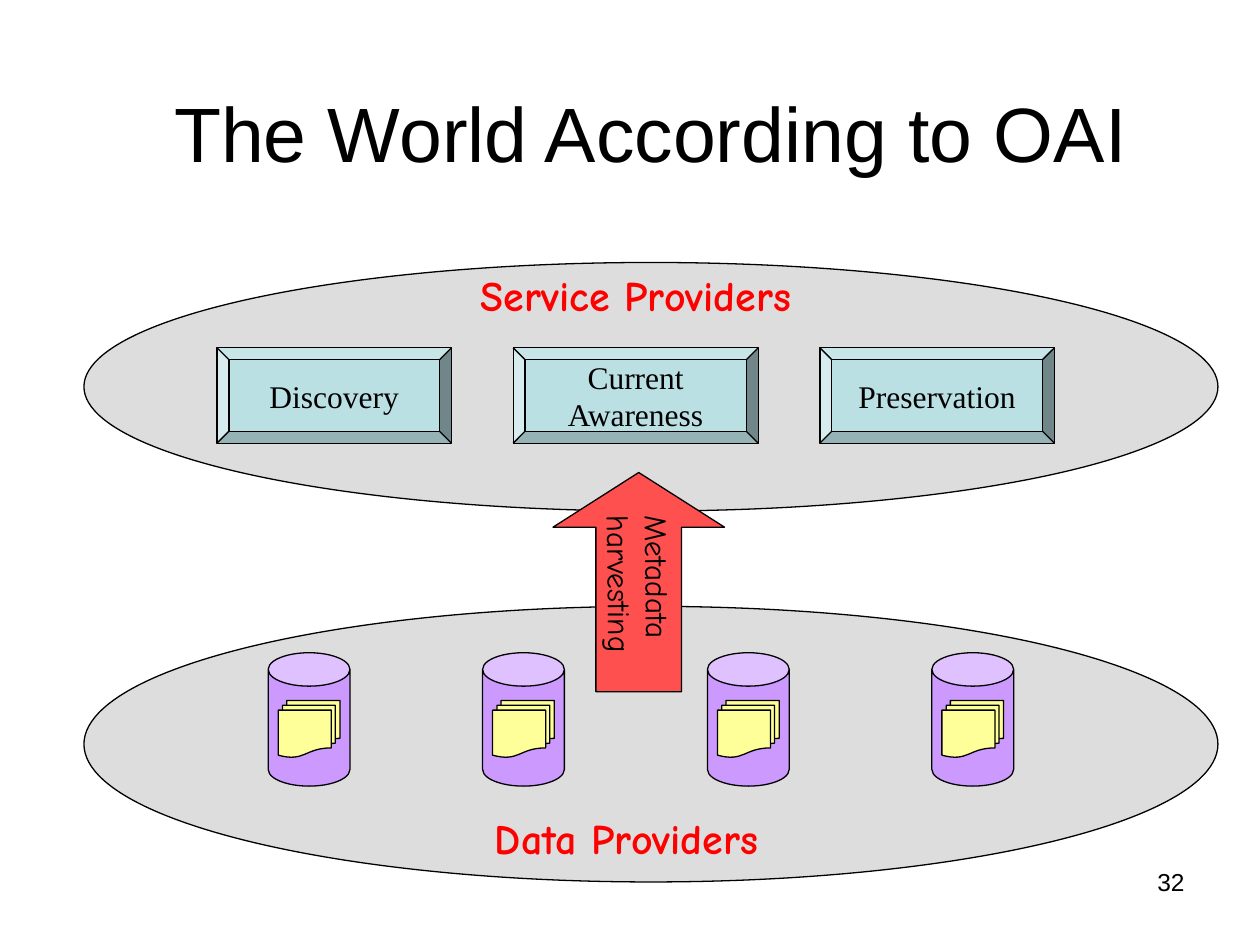
from pptx import Presentation
from pptx.dml.color import RGBColor
from pptx.enum import shapes, text
from pptx.util import Pt

KIND = shapes.MSO_SHAPE
ALIGN = text.PP_ALIGN
ANCHOR = text.MSO_ANCHOR


def tint(code):
    return RGBColor.from_string(code)


class Board:
    """Holds the style and the current slide."""
    ink, red, gray = "000000", "FF0000", "DDDDDD"
    sans, serif, hand = "Arial", "Times New Roman", "Comic Neue"

    def __init__(self, slide):
        self.slide = slide

    def letter(self, frame, lines, size, font, color=ink, bold=False,
               align=ALIGN.LEFT, anchor=ANCHOR.TOP, wrap=False):
        """Fill a text frame, one paragraph a line."""
        frame.word_wrap = wrap
        frame.vertical_anchor = anchor
        for i, line in enumerate(lines):
            para = frame.paragraphs[0] if i == 0 else frame.add_paragraph()
            para.alignment = align
            run = para.add_run()
            run.text = line
            run.font.size = Pt(size)
            run.font.name = font
            run.font.bold = bold
            run.font.color.rgb = tint(color)

    def title(self, line, box):
        head = self.slide.shapes.title
        head.left, head.top, head.width, head.height = map(Pt, box)
        self.letter(head.text_frame, [line], 44, self.sans,
                    align=ALIGN.CENTER, anchor=ANCHOR.MIDDLE, wrap=True)

    def shape(self, kind, box, fill, *adjust):
        item = self.slide.shapes.add_shape(kind, *map(Pt, box))
        item.shadow.inherit = False
        item.fill.solid()
        item.fill.fore_color.rgb = tint(fill)
        item.line.color.rgb = tint(self.ink)
        item.line.width = Pt(0.75)
        for i, value in enumerate(adjust):
            item.adjustments[i] = value
        return item

    def label(self, lines, box, size, font, turn=0, **style):
        item = self.slide.shapes.add_textbox(*map(Pt, box))
        item.rotation = turn
        self.letter(item.text_frame, lines, size, font, **style)

    def service(self, lines, left, width):
        item = self.shape(KIND.BEVEL, (left, 198.75, width, 54.5), "BBE0E3", 0.125)
        self.letter(item.text_frame, lines, 18, self.serif,
                    align=ALIGN.CENTER, anchor=ANCHOR.MIDDLE)

    def store(self, left):
        """Draw a data store with its documents."""
        self.shape(KIND.CAN, (left, 373, 46.75, 76.25), "CC99FF", 0.409)
        self.shape(KIND.FLOWCHART_MULTIDOCUMENT,
                   (left + 5.75, 400.25, 35.25, 32.5), "FFFF99")


def main():
    deck = Presentation()
    deck.slide_width, deck.slide_height = Pt(720), Pt(540)
    board = Board(deck.slides.add_slide(deck.slide_layouts[5]))

    board.title("The World According to OAI", (42, 30, 660, 90))
    board.label(["32"], (516, 492, 168, 37.5), 14, board.sans,
                align=ALIGN.RIGHT, wrap=True)

    for top, height in ((346.5, 157.5), (150, 142)):
        board.shape(KIND.OVAL, (48, top, 648, height), board.gray)
    for left in (153.25, 275.75, 404.25, 532.5):
        board.store(left)
    for lines, left, width in ((["Discovery"], 124, 134),
                               (["Current", "Awareness"], 293.25, 140),
                               (["Preservation"], 468.5, 134)):
        board.service(lines, left, width)

    for name, box in (("Service Providers", (267.75, 150.5, 219, 35.5)),
                      ("Data Providers", (275.75, 461, 188, 36))):
        board.label([name], box, 24, board.hand, color=board.red, bold=True)

    board.shape(KIND.UP_ARROW, (316, 270, 98, 125.25), "FF5050", 0.5, 0.319)
    board.label(["Metadata", "harvesting"], (314, 313.25, 102.25, 50.5),
                18, board.hand, turn=89.3)

    deck.save("out.pptx")


if __name__ == "__main__":
    main()
